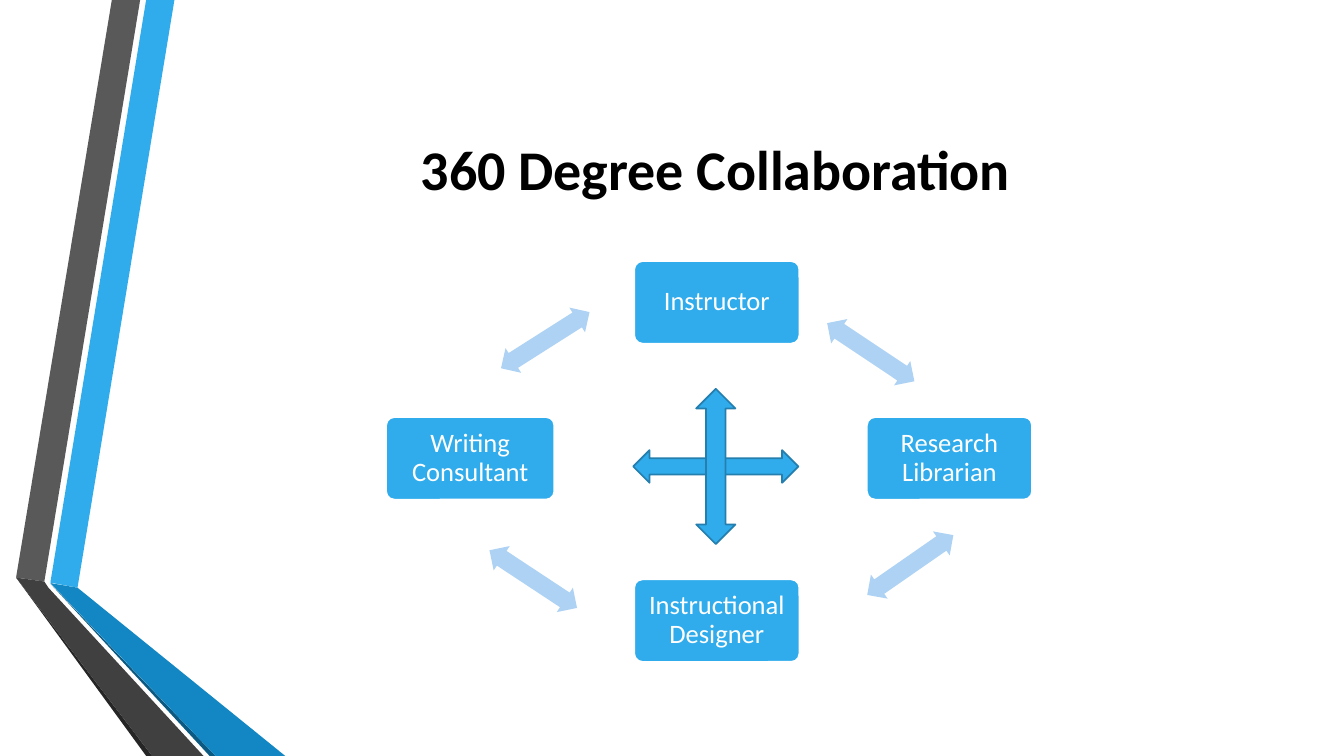
from pptx import Presentation
from pptx.dml.color import RGBColor
from pptx.enum.shapes import MSO_SHAPE
from pptx.enum.text import MSO_ANCHOR, PP_ALIGN
from pptx.util import Pt

TITLE = "360 Degree Collaboration"
FONT = "Calibri"
BLUE, PALE_BLUE, OUTLINE = "30ACEC", "AED2F4", "247FAF"
WHITE, BLACK = "FFFFFF", "000000"

# Fill and corner points of each band at the left edge, back to front
RIBBONS = [
    (BLUE, [(36, 416.2), (55.4, 419.8), (124.6, 0), (104.4, 0)]),
    ("595959", [(100.1, 0), (79.9, 0), (11.5, 412.6), (31.7, 415.4)]),
    ("262626", [(11.5, 412.6), (104.4, 540), (108.7, 540)]),
    ("0C5A82", [(36, 416.9), (149.8, 540), (154.1, 540)]),
    ("1287C3", [(36, 416.5), (154.1, 540), (203.8, 540), (55.4, 419.8)]),
    ("404040", [(145.4, 540), (34.6, 419.8), (31.7, 415.4), (11.5, 412.6),
                (108.7, 540)]),
]

# Role, centre x, centre y, width
ROLES = [
    ("Instructor", 512, 216, 118),
    ("Research Librarian", 678.2, 327.4, 118),
    ("Instructional Designer", 512, 443.3, 118),
    ("Writing Consultant", 335.9, 327.4, 120.2),
]
ROLE_HEIGHT = 59

# Centre x, centre y, rotation
RING_ARROWS = [
    (622, 251.6, 33.7),
    (650.2, 403.6, 145.2),
    (380.9, 413.6, 213.4),
    (389.5, 243, 327.6),
]
RING_ARROW_SIZE = (74.9, 20.9)

# Preset, width, height
CROSS_CENTRE = (511.3, 333.2)
CROSS_ARROWS = [
    (MSO_SHAPE.LEFT_RIGHT_ARROW, 118, 23.3),
    (MSO_SHAPE.UP_DOWN_ARROW, 28, 110.9),
]


def rgb(value):
    return RGBColor.from_string(value)


def paint(sp, fill, line=None):
    sp.shadow.inherit = False
    sp.fill.solid()
    sp.fill.fore_color.rgb = rgb(fill)
    if line:
        sp.line.color.rgb = rgb(line)
        sp.line.width = Pt(1.25)
    else:
        sp.line.fill.background()


def add_centred(slide, preset, cx, cy, w, h, fill, line=None):
    """Add a painted preset shape around its centre point."""
    sp = slide.shapes.add_shape(
        preset, Pt(cx - w / 2), Pt(cy - h / 2), Pt(w), Pt(h))
    paint(sp, fill, line)
    return sp


def write(sp, text, size, color, bold=False, inset=7.2):
    tf = sp.text_frame
    tf.text = text
    tf.word_wrap = True
    tf.vertical_anchor = MSO_ANCHOR.MIDDLE
    tf.margin_left = tf.margin_right = Pt(inset)
    tf.margin_top = tf.margin_bottom = Pt(inset)
    p = tf.paragraphs[0]
    p.alignment = PP_ALIGN.CENTER
    p.line_spacing = 0.9
    font = p.runs[0].font
    font.name, font.size, font.bold = FONT, Pt(size), bold
    font.color.rgb = rgb(color)


def main():
    prs = Presentation()
    prs.slide_width, prs.slide_height = Pt(960), Pt(540)
    slide = prs.slides.add_slide(prs.slide_layouts[6])

    for fill, points in RIBBONS:
        corners = [(Pt(x), Pt(y)) for x, y in points]
        builder = slide.shapes.build_freeform(*corners[0])
        builder.add_line_segments(corners[1:], close=True)
        paint(builder.convert_to_shape(), fill)

    title = slide.shapes.add_textbox(Pt(116.6), Pt(54), Pt(789.1), Pt(138.2))
    write(title, TITLE, 40, BLACK, bold=True)

    for role, cx, cy, w in ROLES:
        sp = add_centred(slide, MSO_SHAPE.ROUNDED_RECTANGLE, cx, cy,
                         w, ROLE_HEIGHT, BLUE, WHITE)
        sp.adjustments[0] = 0.1
        write(sp, role, 19, WHITE, inset=6)

    for cx, cy, angle in RING_ARROWS:
        sp = add_centred(slide, MSO_SHAPE.LEFT_RIGHT_ARROW, cx, cy,
                         *RING_ARROW_SIZE, PALE_BLUE)
        sp.adjustments[0] = 0.6
        sp.rotation = angle

    for preset, w, h in CROSS_ARROWS:
        add_centred(slide, preset, *CROSS_CENTRE, w, h, BLUE, OUTLINE)

    prs.save("out.pptx")


if __name__ == "__main__":
    main()
